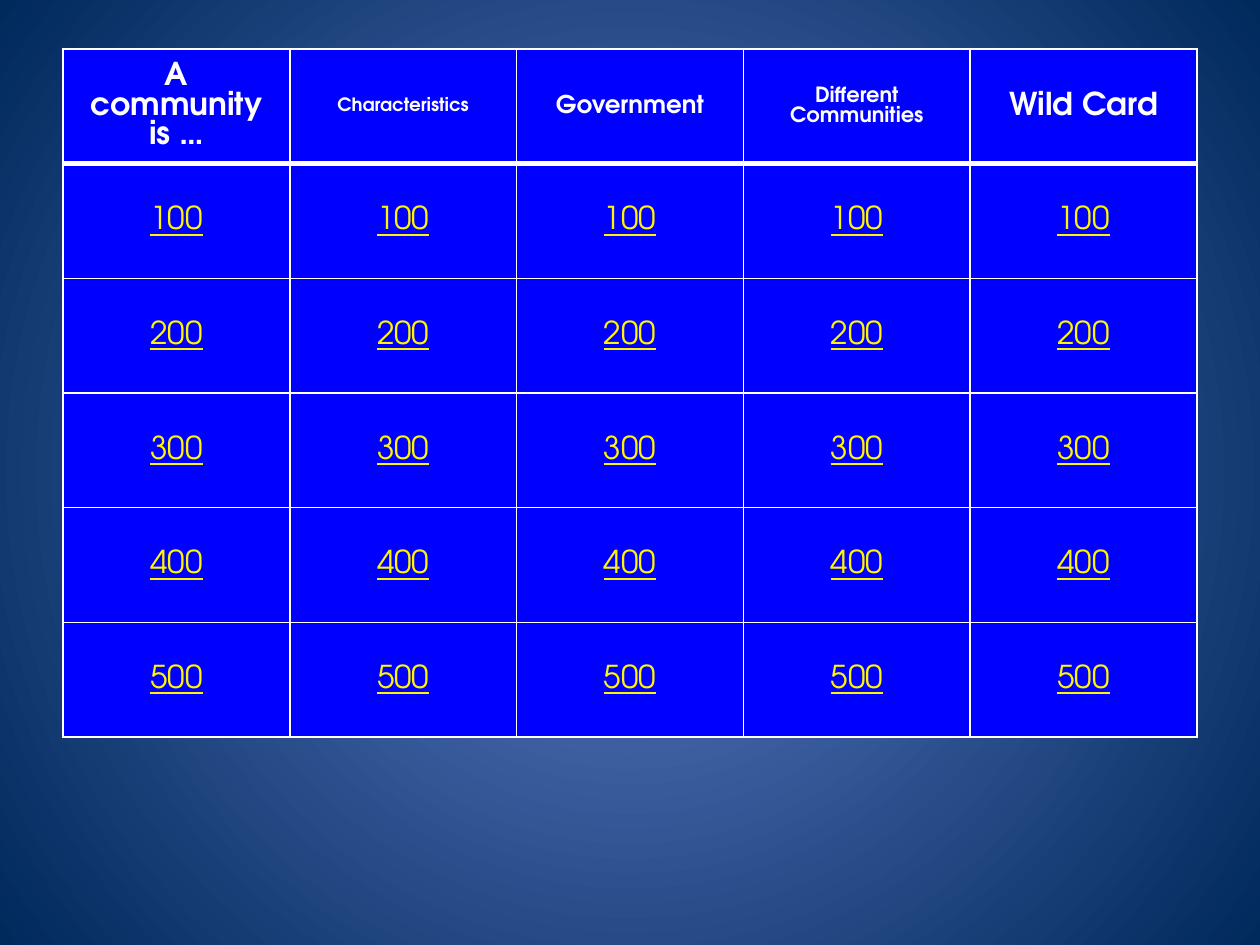
from lxml.etree import SubElement
from pptx import Presentation
from pptx.dml.color import RGBColor
from pptx.enum.text import MSO_ANCHOR, PP_ALIGN
from pptx.oxml.ns import qn
from pptx.util import Inches, Pt

WHITE = RGBColor(0xFF, 0xFF, 0xFF)
YELLOW = RGBColor(0xFF, 0xF5, 0x00)
BLUE = RGBColor(0x00, 0x00, 0xFF)
GLOW = RGBColor(0x5E, 0x7C, 0xC5)
NAVY = RGBColor(0x00, 0x29, 0x5C)
FONT = "TeX Gyre Adventor"

# Topic of each column and its text size
TOPICS = [
    ("A community is …", 18),
    ("Characteristics", 10.5),
    ("Government", 14),
    ("Different Communities", 12),
    ("Wild Card", 18),
]
POINTS = range(100, 600, 100)
COL, ROW = 1.8, 0.91


def paint_back(slide):
    """Fill the background with a round glow from the centre."""
    fill = slide.background.fill
    fill.gradient()
    for stop, color in zip(fill.gradient_stops, (GLOW, NAVY)):
        stop.color.rgb = color
    grad = slide.element.find(".//" + qn("a:gradFill"))
    grad.remove(grad.find(qn("a:lin")))
    shade = SubElement(grad, qn("a:path"), path="circle")
    SubElement(shade, qn("a:fillToRect"),
               dict.fromkeys("ltrb", "50000"))


def add_edges(cell, top, bottom):
    """Rule the four sides of a cell in white; widths in points."""
    props = cell._tc.get_or_add_tcPr()
    for side, width in (("L", 1), ("R", 1), ("T", top), ("B", bottom)):
        line = SubElement(props, qn("a:ln" + side), w=str(Pt(width)))
        solid = SubElement(line, qn("a:solidFill"))
        SubElement(solid, qn("a:srgbClr"), val=str(WHITE))


def fill_cell(cell, text, size, color, head=False):
    """Write one centred run on blue."""
    cell.fill.solid()
    cell.fill.fore_color.rgb = BLUE
    cell.vertical_anchor = MSO_ANCHOR.MIDDLE
    para = cell.text_frame.paragraphs[0]
    para.alignment = PP_ALIGN.CENTER
    run = para.add_run()
    run.text = text
    font = run.font
    font.name, font.size, font.color.rgb = FONT, Pt(size), color
    font.bold, font.underline = head, not head


def add_board(slide):
    """Add the game board: topics above, points below."""
    rows, cols = len(POINTS) + 1, len(TOPICS)
    table = slide.shapes.add_table(
        rows, cols, Inches(0.5), Inches(0.39),
        Inches(COL * cols), Inches(ROW * rows)).table
    for col in table.columns:
        col.width = Inches(COL)
    for row in table.rows:
        row.height = Inches(ROW)

    for c, (topic, size) in enumerate(TOPICS):
        # Topic with a thick rule under it
        cell = table.cell(0, c)
        add_edges(cell, 1, 3)
        fill_cell(cell, topic, size, WHITE, head=True)
        # Points
        for r, score in enumerate(POINTS, 1):
            cell = table.cell(r, c)
            add_edges(cell, 3 if r == 1 else 1, 1)
            fill_cell(cell, str(score), 18, YELLOW)


def main():
    deck = Presentation()
    deck.slide_width, deck.slide_height = Inches(10), Inches(7.5)
    slide = deck.slides.add_slide(deck.slide_layouts[6])
    paint_back(slide)
    add_board(slide)
    deck.save("out.pptx")


if __name__ == "__main__":
    main()
